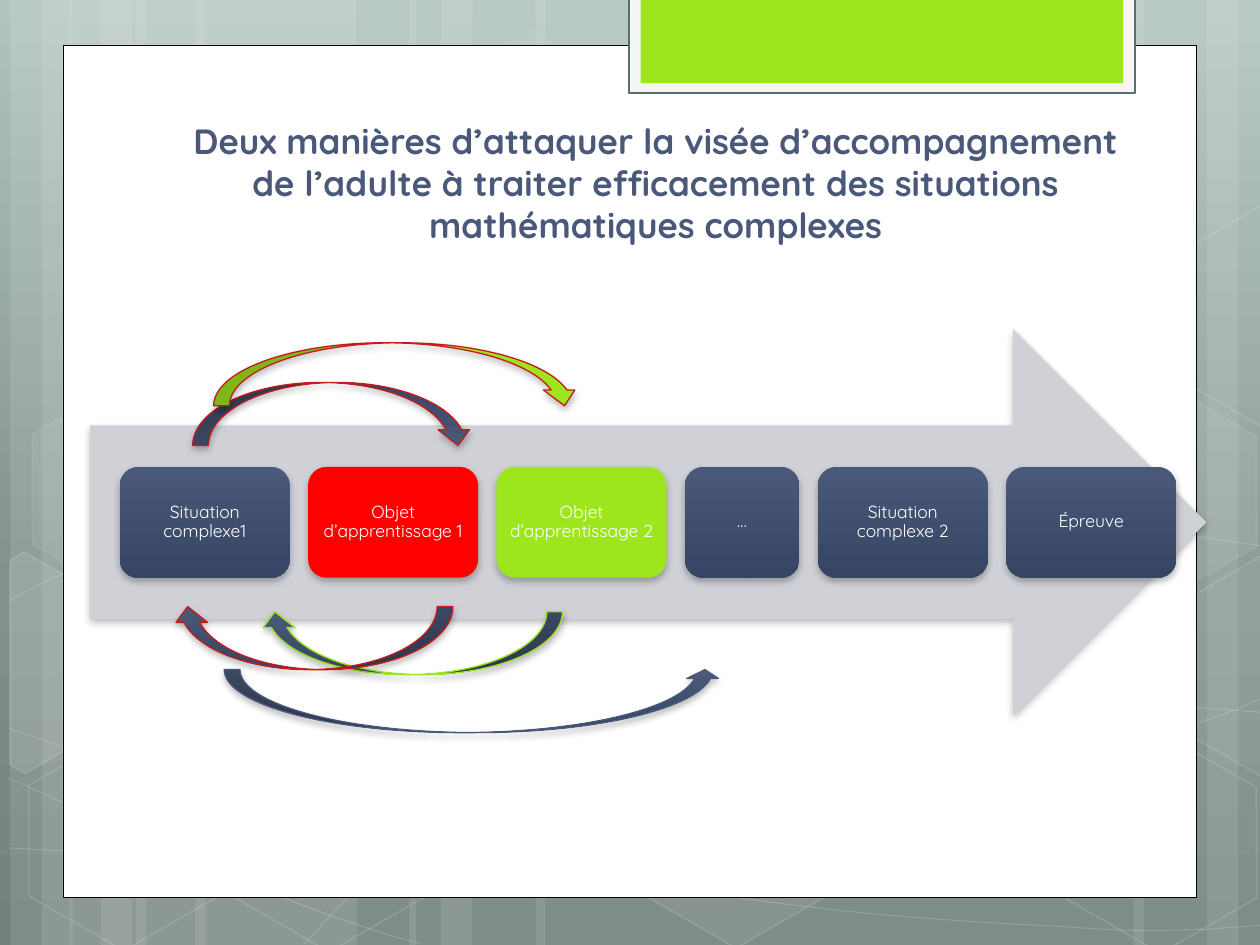
from copy import deepcopy

from lxml.etree import SubElement
from pptx import Presentation
from pptx.dml.color import RGBColor
from pptx.enum.shapes import MSO_SHAPE
from pptx.enum.text import MSO_ANCHOR, PP_ALIGN
from pptx.oxml.ns import qn
from pptx.util import Inches, Pt

COLUMNS, ROWS = 100, 75
CELL = Inches(0.1)
FONT = "Quicksand"
WHITE, NAVY, GREEN, RED, CRIMSON = "FFFFFF", "4A5979", "9DE61E", "FF0000", "C61B1B"
NAVY_FADE = ((0, NAVY), (1, "374564"))
BACKDROP_FADE = ((0, "B2C5BD"), (0.62, "81928B"), (1, "71817B"))

VEILS = [(10.8, 17.5), (0.8, 5), (3.3, 8.3), (15.5, 17.5), (5.5, 5), (8, 8.3),
         (73.3, 17.5), (95.8, 5), (90, 8.3), (42.5, 30.8), (32.5, 5), (35, 8.3)]
CURVES = [
    [(0.7, 67.3), (6.1, 67.6), (11.5, 67.9), (19, 67.8), (26.5, 67.7), (35.8, 67.5),
     (45.8, 66.5), (55.8, 65.5), (70, 63.6), (79.2, 61.7), (88.3, 59.8), (97.7, 56.8),
     (100.7, 55.1)],
    [(0.7, 47.7), (3.6, 46.1), (6.5, 44.6), (12.1, 43.1), (17.8, 41.6), (25.9, 39.4),
     (34.7, 38.7), (43.6, 38), (54.4, 37.9), (65.4, 38.7), (76.4, 39.5), (94.7, 42.6),
     (100.7, 43.4)],
    [(0.6, 61.7), (12.7, 67.2), (24.7, 72.7), (33.4, 74.9)],
    [(0.7, 57.8), (3.8, 58.9), (7, 60), (12.8, 61.6), (18.6, 63.1), (27.3, 65.6),
     (35.7, 67.3), (44, 69), (54.5, 70.8), (62.8, 71.8), (71.1, 72.9), (80, 73.3),
     (85.3, 73.6), (90.5, 74), (91.9, 73.8), (94.5, 73.8), (97.1, 73.7), (98.9, 73.5),
     (100.7, 73.4)],
    [(24.2, 74.9), (26, 72.9), (27.8, 70.9), (30.2, 69.1), (32.6, 67.3), (36, 65.3),
     (38.8, 63.9), (41.6, 62.5), (43.3, 61.9), (47, 60.9), (50.6, 59.9), (57.3, 58.5),
     (60.8, 57.8), (64.4, 57.1), (64.9, 57.1), (68, 56.9), (71.1, 56.6), (76, 56.3),
     (79.4, 56.2), (82.9, 56.1), (88.6, 56.2), (88.6, 56.2), (90.8, 56.2), (93.1, 56.2),
     (95.3, 56.2), (97.1, 56.3), (98.8, 56.4), (100.6, 56.6)],
]
HEXAGONS = [(33.4, 3.6, 4, 8), (49.7, 58.9, 6, 12), (1.1, 59.1, None, 12),
            (1.4, 31.2, 7, 8), (17.4, 59.2, None, 12), (83.4, 59.3, None, 12),
            (83.4, 31.4, 7, 8)]
CUT_HEXAGONS = [
    ([(0.8, 44.5), (1.9, 43.8), (9.6, 48.2), (9.5, 57), (2, 61.4), (0.8, 60.7)], 10),
    ([(92.6, 48.5), (100.1, 44.1), (100.9, 44.6), (100.9, 61.3), (100.2, 61.7),
      (92.6, 57.3)], 4),
    ([(92.6, 20.7), (100.1, 16.3), (101, 16.8), (100.9, 33.5), (100.2, 33.9),
      (92.6, 29.5)], None),
]
STEPS = [("Situation complexe1", NAVY_FADE, 13.5), ("Objet d’apprentissage 1", RED, 13.5),
         ("Objet d’apprentissage 2", GREEN, 13.5), ("…", NAVY_FADE, 9.1),
         ("Situation complexe 2", NAVY_FADE, 13.5), ("Épreuve", NAVY_FADE, 13.5)]
LOOPS = [(20.55, 48.55, 24.1, NAVY_FADE, GREEN, 0, True),
         (17.8, 53.15, 39.4, NAVY_FADE, NAVY, 0, False),
         (13.65, 48.15, 22.3, NAVY_FADE, CRIMSON, 0, True),
         (15.3, 30.35, 22.3, NAVY_FADE, CRIMSON, 180, True),
         (16.95, 27.2, 29.1, GREEN, CRIMSON, 180, True)]
TITLE = ("Deux manières d’attaquer la visée d’accompagnement de l’adulte à traiter "
         "efficacement des situations mathématiques complexes")


def cells(*counts):
    return [int(count * CELL) for count in counts]


def rgb(hex_code):
    return RGBColor.from_string(hex_code)


def fade(fill, owner, colours):
    fill.gradient()
    fill.gradient_angle = 270
    stop_list = next(owner.iter(qn("a:gsLst")))
    for _ in colours[2:]:
        stop_list.append(deepcopy(stop_list[-1]))
    for stop, (position, colour) in zip(fill.gradient_stops, colours):
        stop.position = position
        stop.color.rgb = rgb(colour)


def set_opacity(shape, route, percent):
    colour = shape.element.spPr.find("/".join(qn(tag) for tag in route))
    SubElement(colour, qn("a:alpha"), val=str(percent * 1000))


def paint(shape, fill=None, line=None, width=1, fill_opacity=100, line_opacity=100):
    shape.shadow.inherit = False
    if fill is None:
        shape.fill.background()
    elif isinstance(fill, str):
        shape.fill.solid()
        shape.fill.fore_color.rgb = rgb(fill)
        if fill_opacity < 100:
            set_opacity(shape, ("a:solidFill", "a:srgbClr"), fill_opacity)
    else:
        fade(shape.fill, shape.element, fill)
    if line is None:
        shape.line.fill.background()
    else:
        shape.line.color.rgb = rgb(line)
        shape.line.width = Pt(width)
        if line_opacity < 100:
            set_opacity(shape, ("a:ln", "a:solidFill", "a:srgbClr"), line_opacity)
    return shape


def add_preset(slide, preset, box, **style):
    return paint(slide.shapes.add_shape(preset, *cells(*box)), **style)


def add_outline(slide, points, close, **style):
    start, *rest = [cells(*point) for point in points]
    builder = slide.shapes.build_freeform(*start)
    builder.add_line_segments(rest, close=close)
    return paint(builder.convert_to_shape(), **style)


def bend(outline):
    trace = next(outline.element.iter(qn("a:path")))
    segments = trace.findall(qn("a:lnTo"))
    for first in range(0, len(segments), 3):
        curve = SubElement(trace, qn("a:cubicBezTo"))
        for segment in segments[first:first + 3]:
            curve.append(segment[0])
            trace.remove(segment)


def cast_shadow(shape):
    effects = shape.element.spPr.find(qn("a:effectLst"))
    shadow = SubElement(effects, qn("a:outerShdw"), blurRad=str(Pt(4)), dist=str(Pt(2)),
                        dir="5400000", rotWithShape="0")
    colour = SubElement(shadow, qn("a:srgbClr"), val="000000")
    SubElement(colour, qn("a:alpha"), val="28000")


def write(frame, text, size, colour, anchor, spacing, bold=False):
    frame.word_wrap = True
    frame.vertical_anchor = anchor
    paragraph = frame.paragraphs[0]
    paragraph.text = text
    paragraph.alignment = PP_ALIGN.CENTER
    paragraph.line_spacing = spacing
    paragraph.font.name = FONT
    paragraph.font.size = Pt(size)
    paragraph.font.bold = bold
    paragraph.font.color.rgb = rgb(colour)


def add_backdrop(slide):
    fade(slide.background.fill, slide.element, BACKDROP_FADE)
    for left, width in VEILS:
        add_preset(slide, MSO_SHAPE.RECTANGLE, (left, 0, width, ROWS),
                   fill=WHITE, fill_opacity=10)
    for knots in CURVES:
        bend(add_outline(slide, knots, False, line=WHITE, width=0.5, line_opacity=20))
    for left, top, opacity, edge in HEXAGONS:
        hexagon = add_preset(slide, MSO_SHAPE.HEXAGON, (left, top, 17.5, 15.2),
                             fill=WHITE if opacity else None, fill_opacity=opacity,
                             line=WHITE, line_opacity=edge)
        hexagon.adjustments[0] = 0.29
        hexagon.rotation = 30
    for corners, opacity in CUT_HEXAGONS:
        add_outline(slide, corners, True, fill=WHITE if opacity else None,
                    fill_opacity=opacity, line=WHITE, line_opacity=12)


def add_card(slide):
    add_preset(slide, MSO_SHAPE.RECTANGLE, (5, 3.6, 90, 67.65),
               fill=WHITE, line="000000", width=0.5)
    add_preset(slide, MSO_SHAPE.RECTANGLE, (49.9, -0.2, 40.2, 7.6),
               fill="F5F5F5", line="567267", width=1.25)
    add_preset(slide, MSO_SHAPE.RECTANGLE, (50.85, -0.2, 38.3, 6.8), fill=GREEN)
    title = slide.shapes.add_textbox(*cells(13.65, 7.5, 76.8, 12.5))
    write(title.text_frame, TITLE, 20, NAVY, MSO_ANCHOR.BOTTOM, 1.0, bold=True)


def add_steps(slide, left=9.5, gap=1.45):
    path_arrow = add_preset(slide, MSO_SHAPE.RIGHT_ARROW, (7.15, 26.1, 88.6, 30.7),
                            fill="D0D1D7")
    cast_shadow(path_arrow)
    for label, fill, width in STEPS:
        step = add_preset(slide, MSO_SHAPE.ROUNDED_RECTANGLE, (left, 37.05, width, 8.8),
                          fill=fill)
        cast_shadow(step)
        frame = step.text_frame
        frame.margin_left = frame.margin_right = Inches(0.04)
        frame.margin_top = frame.margin_bottom = Inches(0.04)
        write(frame, label, 10, WHITE, MSO_ANCHOR.MIDDLE, 0.9)
        left += width + gap


def add_loops(slide):
    for left, top, width, fill, line, turn, mirrored in LOOPS:
        loop = add_preset(slide, MSO_SHAPE.CURVED_UP_ARROW, (left, top, width, 5),
                          fill=fill, line=line, width=0.75)
        cast_shadow(loop)
        loop.rotation = turn
        if mirrored:
            loop.element.spPr.find(qn("a:xfrm")).set("flipH", "1")
        else:
            loop.adjustments[2] = 0.14


def main():
    deck = Presentation()
    deck.slide_width, deck.slide_height = cells(COLUMNS, ROWS)
    slide = deck.slides.add_slide(deck.slide_layouts[6])
    add_backdrop(slide)
    add_card(slide)
    add_steps(slide)
    add_loops(slide)
    deck.save("out.pptx")


if __name__ == "__main__":
    main()
